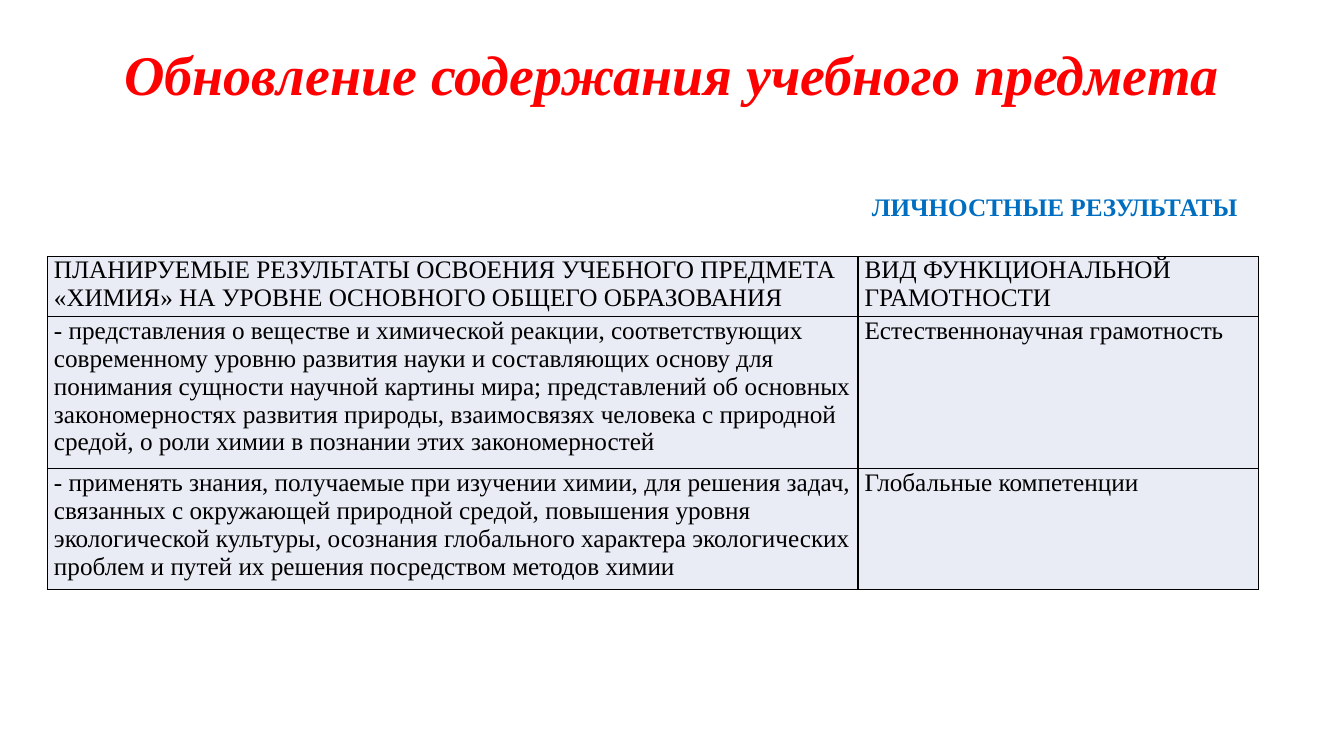
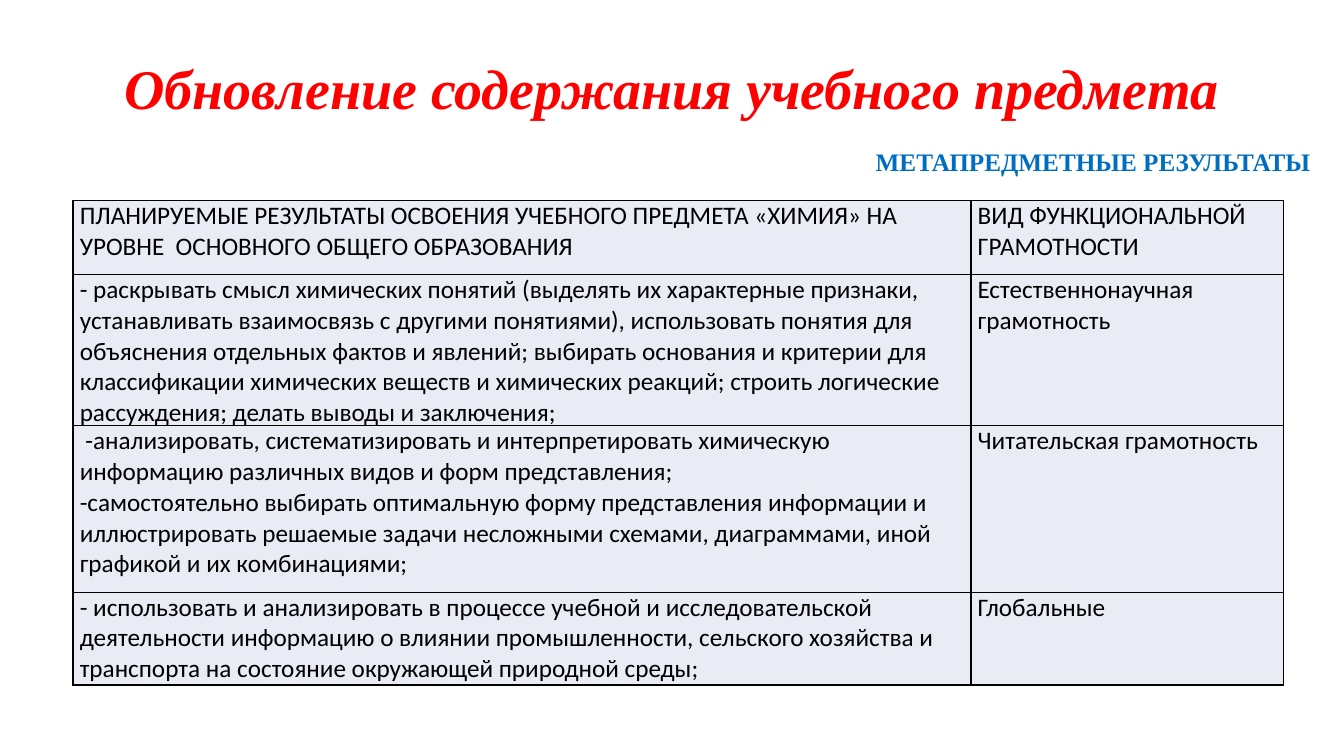
"""Build two slides on the updated content of the school chemistry course."""
from lxml.etree import SubElement
from pptx import Presentation
from pptx.dml.color import RGBColor
from pptx.enum.text import MSO_ANCHOR as ANCHOR, MSO_AUTO_SIZE as AUTO, PP_ALIGN as ALIGN
from pptx.oxml.ns import qn
from pptx.util import Cm, Pt

SERIF, SANS = "Times New Roman", "Calibri"
RED, BLUE, BLACK, PALE = "FF0000", "006EC0", "000000", "E9EBF5"
TITLE = "Обновление содержания учебного предмета"
TITLE_FMT = {"name": SERIF, "size": Pt(40), "bold": True, "italic": True}
HEADING_FMT = {"name": SERIF, "size": Pt(18), "bold": True}
CELL_FMT = {"size": Pt(18), "bold": False}
CELL_INSETS = {"margin_left": Cm(0.17), "margin_right": Cm(0.17),
               "margin_top": 0, "margin_bottom": 0}

SLIDES = [
    {
        "title_box": (2.32, 1.02, 29.21, 1.88),
        "heading": "ЛИЧНОСТНЫЕ РЕЗУЛЬТАТЫ",
        "heading_box": (21.72, 4.7, 9.98, 1.02),
        "table_at": (1.19, 6.46),
        "cols": (20.43, 10.09),
        "heights": (1.52, 3.83, 3.04),
        "font": SERIF,
        "rows": [
            ("ПЛАНИРУЕМЫЕ РЕЗУЛЬТАТЫ ОСВОЕНИЯ УЧЕБНОГО ПРЕДМЕТА «ХИМИЯ» "
             "НА УРОВНЕ ОСНОВНОГО ОБЩЕГО ОБРАЗОВАНИЯ",
             "ВИД ФУНКЦИОНАЛЬНОЙ\nГРАМОТНОСТИ"),
            ("- представления о веществе и химической реакции, соответствующих "
             "современному уровню развития науки и составляющих основу для "
             "понимания сущности научной картины мира; представлений об основных "
             "закономерностях развития природы, взаимосвязях человека с природной "
             "средой, о роли химии в познании этих закономерностей",
             "Естественнонаучная грамотность"),
            ("- применять знания, получаемые при изучении химии, для решения задач, "
             "связанных с окружающей природной средой, повышения уровня "
             "экологической культуры, осознания глобального характера экологических "
             "проблем и путей их решения посредством методов химии",
             "Глобальные компетенции"),
        ],
    },
    {
        "title_box": (2.32, 1.02, 29.21, 2.57),
        "heading": "МЕТАПРЕДМЕТНЫЕ РЕЗУЛЬТАТЫ",
        "heading_box": (21.82, 3.57, 11.73, 1.02),
        "table_at": (1.84, 5.06),
        "cols": (22.63, 7.88),
        "heights": (1.86, 3.8, 4.19, 2.34),
        "font": SANS,
        "rows": [
            ("ПЛАНИРУЕМЫЕ РЕЗУЛЬТАТЫ ОСВОЕНИЯ УЧЕБНОГО ПРЕДМЕТА «ХИМИЯ» "
             "НА УРОВНЕ  ОСНОВНОГО ОБЩЕГО ОБРАЗОВАНИЯ",
             "ВИД ФУНКЦИОНАЛЬНОЙ ГРАМОТНОСТИ"),
            ("- раскрывать смысл химических понятий (выделять их характерные "
             "признаки, устанавливать взаимосвязь с другими понятиями), "
             "использовать понятия для объяснения отдельных фактов и явлений; "
             "выбирать основания и критерии для классификации химических веществ "
             "и химических реакций; строить логические рассуждения; делать выводы "
             "и заключения;",
             "Естественнонаучная грамотность"),
            (" -анализировать, систематизировать и интерпретировать химическую "
             "информацию различных видов и форм представления;\n"
             "-самостоятельно выбирать оптимальную форму представления информации "
             "и иллюстрировать решаемые задачи несложными схемами, диаграммами, "
             "иной графикой и их комбинациями;",
             "Читательская грамотность"),
            ("- использовать и анализировать в процессе учебной и "
             "исследовательской деятельности информацию о влиянии промышленности, "
             "сельского хозяйства и транспорта на состояние окружающей природной "
             "среды;",
             "Глобальные"),
        ],
    },
]


def set_color(fmt, value):
    """Give a font colour or a fill colour the value of a hex string."""
    fmt.rgb = RGBColor.from_string(value)


def set_attrs(obj, attrs):
    """Set every attribute of obj named in attrs."""
    for name, value in attrs.items():
        setattr(obj, name, value)


def write(tf, text, fmt, color):
    """Write text, one paragraph a line, with one run format."""
    tf.text = text
    for p in tf.paragraphs:
        for r in p.runs:
            set_attrs(r.font, fmt)
            set_color(r.font.color, color)


def add_title(s, box):
    """Add the shared slide title, centred in box."""
    tf = s.shapes.add_textbox(*map(Cm, box)).text_frame
    set_attrs(tf, {"word_wrap": True, "vertical_anchor": ANCHOR.MIDDLE})
    write(tf, TITLE, TITLE_FMT, RED)
    set_attrs(tf.paragraphs[0], {"alignment": ALIGN.CENTER, "line_spacing": 0.9})


def add_heading(s, box, text):
    """Add the one-line heading above the table."""
    tf = s.shapes.add_textbox(*map(Cm, box)).text_frame
    set_attrs(tf, {"word_wrap": False, "auto_size": AUTO.SHAPE_TO_FIT_TEXT})
    write(tf, text, HEADING_FMT, BLUE)


def add_borders(cell):
    """Draw a thin black line on each side of a cell."""
    tc_pr = cell._tc.get_or_add_tcPr()
    for side in ("a:lnL", "a:lnR", "a:lnT", "a:lnB"):
        ln = SubElement(tc_pr, qn(side), w=str(Pt(1)))
        fill = SubElement(ln, qn("a:solidFill"))
        SubElement(fill, qn("a:srgbClr"), val=BLACK)


def add_results(s, at, cols, heights, rows, font):
    """Add the table of results with its top left corner at at."""
    size = (sum(cols), sum(heights))
    table = s.shapes.add_table(len(rows), len(cols), *map(Cm, at + size)).table
    set_attrs(table, {"first_row": False, "horz_banding": False})
    for col, width in zip(table.columns, cols):
        col.width = Cm(width)
    for row, height, texts in zip(table.rows, heights, rows):
        row.height = Cm(height)
        for cell, text in zip(row.cells, texts):
            set_attrs(cell, CELL_INSETS)
            add_borders(cell)
            cell.fill.solid()
            set_color(cell.fill.fore_color, PALE)
            write(cell.text_frame, text, {**CELL_FMT, "name": font}, BLACK)


def add_slide(prs, d):
    """Add one slide with title, heading and table of results."""
    s = prs.slides.add_slide(prs.slide_layouts[6])
    add_title(s, d["title_box"])
    add_heading(s, d["heading_box"], d["heading"])
    add_results(s, d["table_at"], d["cols"], d["heights"], d["rows"], d["font"])


def main():
    """Build and save the presentation."""
    prs = Presentation()
    set_attrs(prs, {"slide_width": Cm(33.87), "slide_height": Cm(19.05)})
    for d in SLIDES:
        add_slide(prs, d)
    prs.save("out.pptx")


if __name__ == "__main__":
    main()
